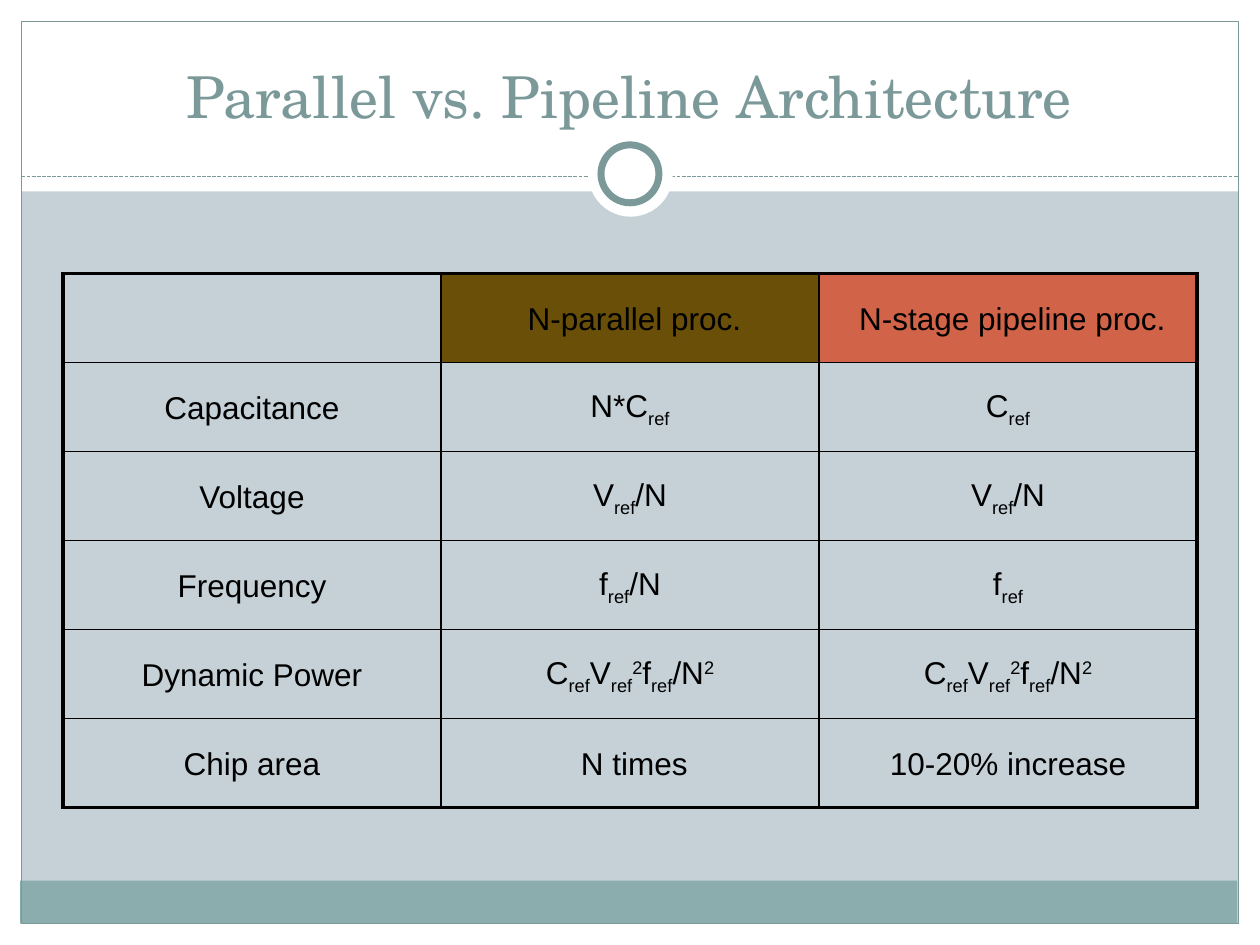
import pptx
import pptx.util
import pptx.dml.color
import pptx.enum.dml
import pptx.enum.shapes
import pptx.enum.text
import pptx.oxml.ns
import lxml.etree
from dataclasses import dataclass

Inches, Pt = pptx.util.Inches, pptx.util.Pt
RGB = pptx.dml.color.RGBColor.from_string
SHAPE = pptx.enum.shapes.MSO_SHAPE
qn = pptx.oxml.ns.qn


@dataclass(frozen=True)
class Theme:
    backdrop: str = "C5D1D7"
    white: str = "FFFFFF"
    accent: str = "7C999A"
    footer: str = "8CADAE"
    ink: str = "000000"
    parallel: str = "694F07"
    pipeline: str = "D16349"
    title_font: str = "TeX Gyre Schola"
    table_font: str = "Arial"
    title_size: int = 33
    table_size: int = 18


theme = Theme()


def add_panel(geometry, box, fill=None, line=None, width=0.75):
    panel = slide.shapes.add_shape(geometry, *[Inches(v) for v in box])
    panel.shadow.inherit = False
    if fill:
        panel.fill.solid()
        panel.fill.fore_color.rgb = RGB(fill)
    else:
        panel.fill.background()
    if line:
        panel.line.color.rgb = RGB(line)
        panel.line.width = Pt(width)
    else:
        panel.line.fill.background()


def add_run(paragraph, text, font, size, color, baseline=0):
    run = paragraph.add_run()
    run.text = text
    run.font.name = font
    run.font.size = Pt(size)
    run.font.color.rgb = RGB(color)
    if baseline:
        run.font._element.set("baseline", str(baseline * 1000))


deck = pptx.Presentation()
deck.slide_width, deck.slide_height = Inches(10), Inches(7.5)
slide = deck.slides.add_slide(deck.slide_layouts[6])
slide.background.fill.solid()
slide.background.fill.fore_color.rgb = RGB(theme.backdrop)

# White margins, footer band and frame
for margin in [(0, 7.33, 10, 0.17), (0, 0, 10, 1.52),
               (0, 0, 0.17, 7.5), (9.83, 0, 0.17, 7.5)]:
    add_panel(SHAPE.RECTANGLE, margin, fill=theme.white)
add_panel(SHAPE.RECTANGLE, (0.16, 6.99, 9.66, 0.34), fill=theme.footer)
add_panel(SHAPE.RECTANGLE, (0.17, 0.17, 9.66, 7.16), line=theme.accent)

# Dashed divider with the ring on it
divider = slide.shapes.add_connector(
    pptx.enum.shapes.MSO_CONNECTOR.STRAIGHT,
    Inches(0.17), Inches(1.4), Inches(9.83), Inches(1.4))
divider.line.color.rgb = RGB(theme.accent)
divider.line.width = Pt(0.75)
divider.line.dash_style = pptx.enum.dml.MSO_LINE.SQUARE_DOT
lxml.etree.SubElement(divider._element.spPr, qn("a:effectLst"))
add_panel(SHAPE.OVAL, (4.67, 1.05, 0.67, 0.67), fill=theme.white)
add_panel(SHAPE.OVAL, (4.77, 1.15, 0.46, 0.46), theme.white, theme.accent, 4)

# Title
title = slide.shapes.add_textbox(
    Inches(0.33), Inches(0.25), Inches(9.33), Inches(0.83)).text_frame
title.word_wrap = True
title.vertical_anchor = pptx.enum.text.MSO_ANCHOR.BOTTOM
title.paragraphs[0].alignment = pptx.enum.text.PP_ALIGN.CENTER
add_run(title.paragraphs[0], "Parallel vs. Pipeline Architecture",
        theme.title_font, theme.title_size, theme.accent)

# Comparison table: "|" parts the runs, "_" lowers a run and "^" raises it
power = "C|_ref|V|_ref|^2|f|_ref|/N|^2"
comparison = [
    ["", " N-parallel proc.", " N-stage pipeline proc."],
    ["Capacitance", "N*C|_ref", "C|_ref"],
    ["Voltage", "V|_ref|/N", "V|_ref|/N"],
    ["Frequency", "f|_ref|/N", "f|_ref"],
    ["Dynamic Power", power, power],
    ["Chip area", " N times", "10-20% increase"],
]
baselines = {"_": -25, "^": 30}
header_fills = [None, theme.parallel, theme.pipeline]
last_row, last_col = len(comparison) - 1, len(header_fills) - 1

table = slide.shapes.add_table(
    len(comparison), len(header_fills),
    Inches(0.5), Inches(2.17), Inches(9), Inches(4.24)).table
table.first_row = False
table.horz_banding = False

for r, entries in enumerate(comparison):
    for c, entry in enumerate(entries):
        cell = table.cell(r, c)
        cell.vertical_anchor = pptx.enum.text.MSO_ANCHOR.MIDDLE
        fill = header_fills[c] if r == 0 else None
        if fill:
            cell.fill.solid()
            cell.fill.fore_color.rgb = RGB(fill)
        else:
            cell.fill.background()

        # Text
        paragraph = cell.text_frame.paragraphs[0]
        paragraph.alignment = pptx.enum.text.PP_ALIGN.CENTER
        paragraph.line_spacing = 1.1
        paragraph.space_before = Pt(0.2 * theme.table_size)
        for part in entry.split("|") if entry else []:
            add_run(paragraph, part.lstrip("_^"), theme.table_font,
                    theme.table_size, theme.ink, baselines.get(part[0], 0))

        # Borders: thick on the outside of the table, thin inside
        outer_edges = {"a:lnL": c == 0, "a:lnR": c == last_col,
                       "a:lnT": r == 0, "a:lnB": r == last_row}
        properties = cell._tc.get_or_add_tcPr()
        for position, (tag, outer) in enumerate(outer_edges.items()):
            border = lxml.etree.Element(qn(tag), w=str(Pt(2.25 if outer else 1)))
            ink = lxml.etree.SubElement(border, qn("a:solidFill"))
            lxml.etree.SubElement(ink, qn("a:srgbClr"), val=theme.ink)
            properties.insert(position, border)

deck.save("out.pptx")
